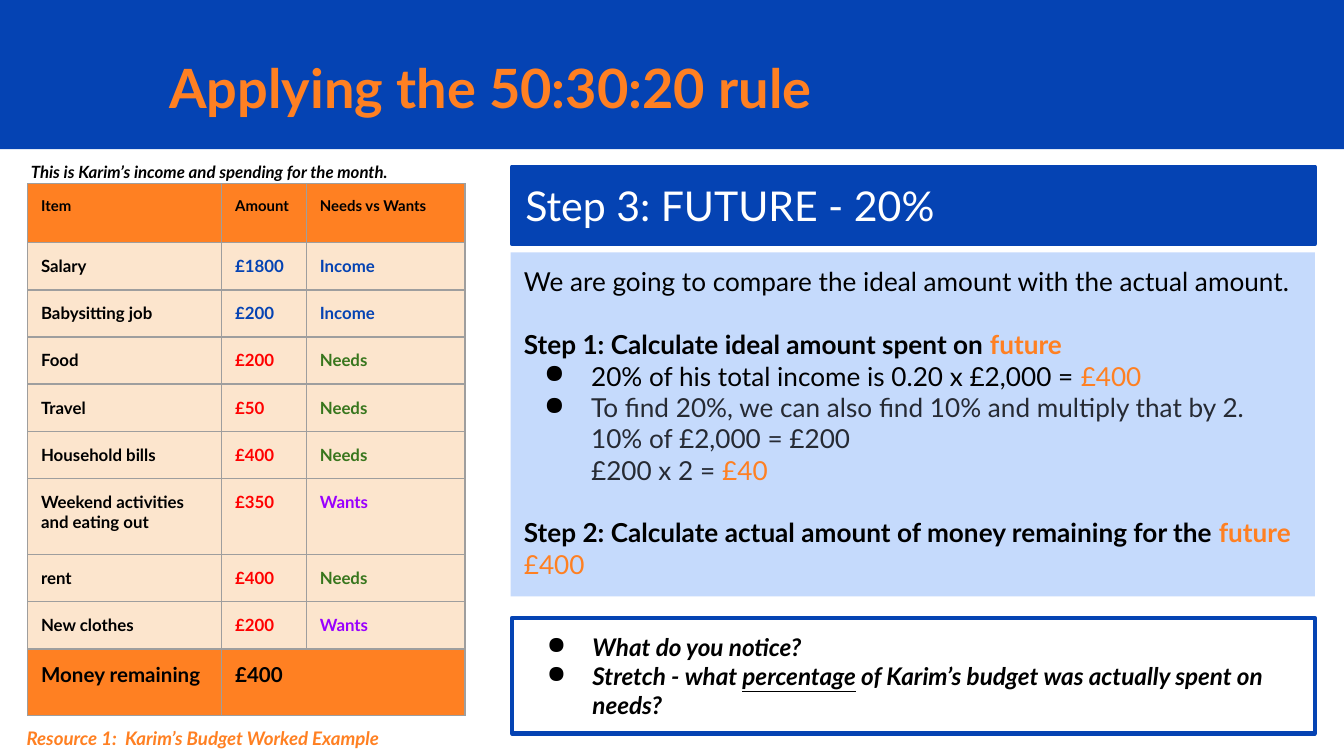
from lxml import etree
from pptx import Presentation
from pptx import util as u
from pptx.dml.color import RGBColor
from pptx.enum import shapes, text
from pptx.oxml import ns

Pt = u.Pt
FONT = "Lato"
COLORS = {
    "blue": "0543B3", "pale_blue": "C5DAFC", "orange": "FF8022",
    "cream": "FCE5CD", "white": "FFFFFF", "black": "000000",
    "ink": "262A33", "red": "FF0000", "green": "38761D",
    "purple": "9900FF", "border": "9E9E9E",
}
KIND_COLORS = {"Income": "blue", "Needs": "green", "Wants": "purple"}
HEADINGS = ["Item", "Amount", "Needs vs Wants"]
BUDGET = [
    ("Salary", "£1800", "Income"),
    ("Babysitting job", "£200", "Income"),
    ("Food", "£200", "Needs"),
    ("Travel", "£50", "Needs"),
    ("Household bills", "£400", "Needs"),
    ("Weekend activities and eating out", "£350", "Wants"),
    ("rent", "£400", "Needs"),
    ("New clothes", "£200", "Wants"),
]
COL_WIDTHS = [104, 45.4, 85]
ROW_HEIGHT, TALL_ROW, HEAD_ROW, TOTAL_ROW = 25.2, 41, 31.7, 35.6


def rgb(name):
    return RGBColor.from_string(COLORS[name])


def add_run(p, words, size, color="black", bold=False, italic=False, underline=False):
    r = p.add_run()
    r.text = words
    r.font.name = FONT
    r.font.size = Pt(size)
    r.font.color.rgb = rgb(color)
    r.font.bold = bold
    r.font.italic = italic
    r.font.underline = underline


def set_indent(p, left, first=0, bullet=False):
    pPr = p._p.get_or_add_pPr()
    pPr.set("marL", str(Pt(left)))
    pPr.set("indent", str(Pt(first)))
    if bullet:
        clr = etree.SubElement(pPr, ns.qn("a:buClr"))
        etree.SubElement(clr, ns.qn("a:srgbClr"), val=COLORS["black"])
        etree.SubElement(pPr, ns.qn("a:buChar"), char="●")


def set_frame(tf, anchor=text.MSO_ANCHOR.TOP):
    tf.word_wrap = True
    tf.auto_size = text.MSO_AUTO_SIZE.NONE
    tf.vertical_anchor = anchor
    tf.margin_left = tf.margin_right = tf.margin_top = tf.margin_bottom = Pt(7.2)


def write(tf, paragraphs, size, **style):
    for i, (runs, layout) in enumerate(paragraphs):
        p = tf.paragraphs[0] if i == 0 else tf.add_paragraph()
        p.alignment = text.PP_ALIGN.LEFT
        if "indent" in layout:
            set_indent(p, *layout["indent"])
        if "before" in layout:
            p.space_before = Pt(layout["before"])
        if "spacing" in layout:
            p.line_spacing = layout["spacing"]
        for words, own in runs:
            add_run(p, words, size, **{**style, **own})


def add_panel(s, box, fill, line=None, anchor=text.MSO_ANCHOR.MIDDLE):
    sp = s.shapes.add_shape(shapes.MSO_SHAPE.RECTANGLE, *map(Pt, box))
    sp.shadow.inherit = False
    sp.fill.solid()
    sp.fill.fore_color.rgb = rgb(fill)
    if line:
        sp.line.color.rgb = rgb(line)
        sp.line.width = Pt(2.25)
    else:
        sp.line.fill.background()
    set_frame(sp.text_frame, anchor)
    return sp.text_frame


def add_label(s, box, words, size, color, **layout):
    tf = s.shapes.add_textbox(*map(Pt, box)).text_frame
    set_frame(tf)
    write(tf, [([(words, {})], layout)], size, color=color, bold=True, italic=True)


def set_title(s, words):
    title = s.shapes.title
    title.left, title.top, title.width, title.height = map(Pt, (83.5, 16.6, 512.6, 49.7))
    set_frame(title.text_frame)
    write(title.text_frame, [([(words, {})], {"spacing": 1.15})], 29, color="orange", bold=True)
    s.shapes.element.append(title.element)


def format_cell(cell, fill):
    tcPr = cell._tc.get_or_add_tcPr()
    for side in ("lnL", "lnR", "lnT", "lnB"):
        ln = etree.SubElement(tcPr, ns.qn("a:" + side), w=str(Pt(0.75)))
        solid = etree.SubElement(ln, ns.qn("a:solidFill"))
        etree.SubElement(solid, ns.qn("a:srgbClr"), val=COLORS["border"])
    cell.fill.solid()
    cell.fill.fore_color.rgb = rgb(fill)
    cell.margin_left = cell.margin_right = cell.margin_top = cell.margin_bottom = Pt(7.2)


def fill_row(table, row, values, colors, fill, size):
    for col in range(len(COL_WIDTHS)):
        format_cell(table.cell(row, col), fill)
    for col, (words, color) in enumerate(zip(values, colors)):
        add_run(table.cell(row, col).text_frame.paragraphs[0], words, size, color, bold=True)


def add_budget_table(s):
    heights = [HEAD_ROW]
    heights += [TALL_ROW if len(item) > 20 else ROW_HEIGHT for item, _, _ in BUDGET]
    heights.append(TOTAL_ROW)
    frame = s.shapes.add_table(len(heights), len(COL_WIDTHS), Pt(14.8), Pt(98.4),
                               Pt(sum(COL_WIDTHS)), Pt(sum(heights)))
    table = frame.table
    table.first_row = table.horz_banding = False
    for column, width in zip(table.columns, COL_WIDTHS):
        column.width = Pt(width)
    for row, height in zip(table.rows, heights):
        row.height = Pt(height)

    fill_row(table, 0, HEADINGS, ["black"] * 3, "orange", 8)
    for row, values in enumerate(BUDGET, 1):
        kind = values[2]
        amount_color = "blue" if kind == "Income" else "red"
        fill_row(table, row, values, ["black", amount_color, KIND_COLORS[kind]], "cream", 9)
    last = len(heights) - 1
    fill_row(table, last, ["Money remaining", "£400"], ["black"] * 2, "orange", 11)
    table.cell(last, 1).merge(table.cell(last, 2))


def add_steps(s):
    orange, ink = {"color": "orange"}, {"color": "ink"}
    bold, bold_orange = {"bold": True}, {"bold": True, "color": "orange"}
    bullet = {"indent": (36, -25.2, True)}
    working = {"indent": (36,)}
    new_step = {"before": 16.8}
    tf = add_panel(s, (273.6, 135.2, 430.8, 184.3), "pale_blue", anchor=text.MSO_ANCHOR.TOP)
    write(tf, [
        ([("We are going to compare the ideal amount with the actual amount.", {})], {}),
        ([("Step 1: Calculate ideal amount spent on ", bold), ("future", bold_orange)], new_step),
        ([("20% of his total income is 0.20 x £2,000 = ", {}), ("£400", orange)], bullet),
        ([("To find 20%, we can also find 10% and multiply that by 2.", ink)], bullet),
        ([("10% of £2,000 = £200", ink)], working),
        ([("£200 x 2 =", ink), (" £40", orange)], working),
        ([("Step 2: Calculate actual amount of money remaining for the ", bold),
          ("future", bold_orange)], new_step),
        ([("£400", orange)], {}),
    ], 14)


def add_questions(s):
    bullet = {"indent": (36, -24.5, True)}
    tf = add_panel(s, (274.3, 331, 430, 62), "white", "blue")
    write(tf, [
        ([("What do you notice?", {})], bullet),
        ([("Stretch - what ", {}), ("percentage", {"underline": True}),
          (" of Karim’s budget was actually spent on needs?", {})], bullet),
    ], 13, bold=True, italic=True)


def main():
    prs = Presentation()
    prs.slide_width, prs.slide_height = Pt(720), Pt(405)
    s = prs.slides.add_slide(prs.slide_layouts[5])
    add_panel(s, (0, 0, 720, 80), "blue")
    add_steps(s)
    add_label(s, (9.4, 79.2, 222.5, 25.2),
              "This is Karim’s income and spending for the month.", 9, "black")
    add_budget_table(s)
    heading = add_panel(s, (274.3, 89.3, 430, 41.5), "blue", "blue")
    write(heading, [([("Step 3: FUTURE - 20%", {})], {})], 22, color="white")
    add_questions(s)
    add_label(s, (7.2, 380.2, 283, 26.6),
              "Resource 1:  Karim’s Budget Worked Example", 10, "orange", spacing=1.15)
    set_title(s, "Applying the 50:30:20 rule")
    prs.save("out.pptx")


if __name__ == "__main__":
    main()
